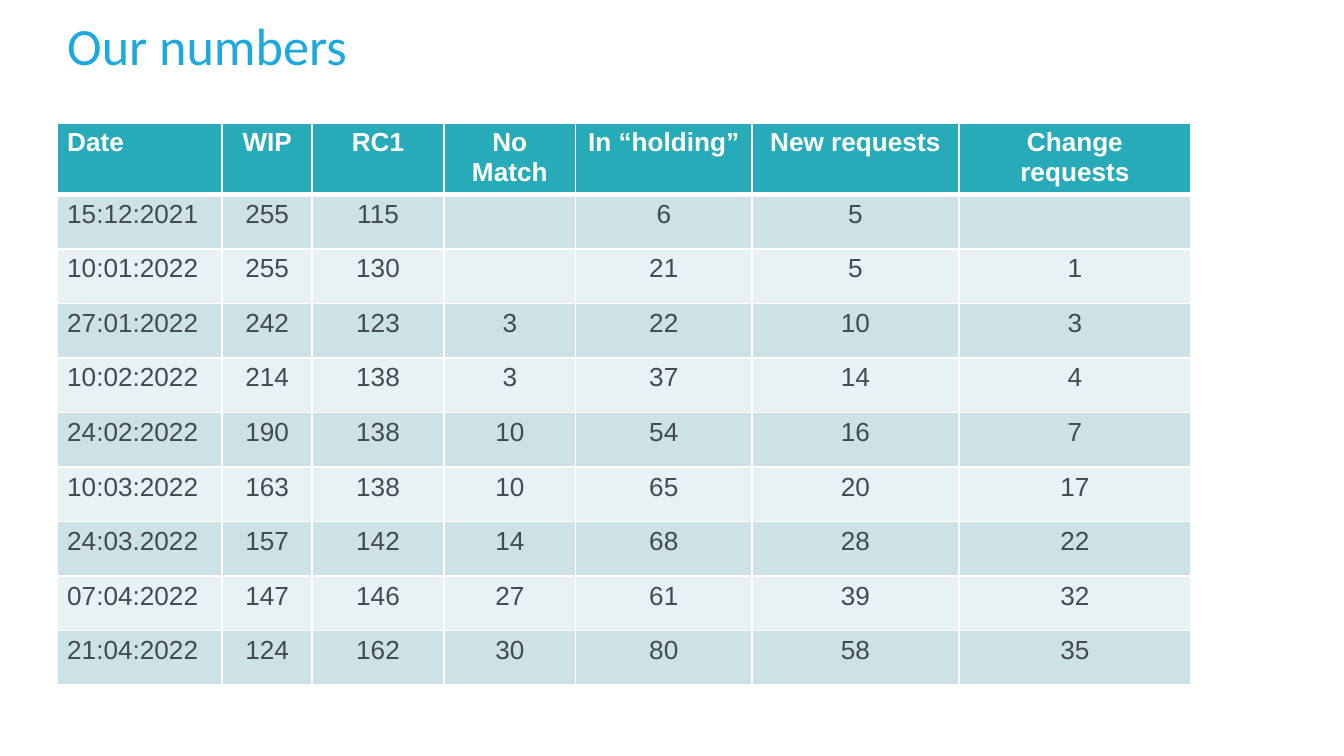
from lxml import etree
from pptx import Presentation
from pptx.dml.color import RGBColor
from pptx.enum.text import MSO_ANCHOR, PP_ALIGN
from pptx.oxml.ns import qn
from pptx.util import Cm, Pt

LEFT, CENTER = PP_ALIGN.LEFT, PP_ALIGN.CENTER
TOP, MIDDLE = MSO_ANCHOR.TOP, MSO_ANCHOR.MIDDLE

WHITE = RGBColor(0xFF, 0xFF, 0xFF)
BLUE = RGBColor(0x1D, 0xA8, 0xDE)
TEAL = RGBColor(0x27, 0xAB, 0xB8)
SLATE = RGBColor(0x42, 0x4A, 0x55)
BANDS = RGBColor(0xE8, 0xF1, 0xF3), RGBColor(0xCD, 0xE2, 0xE6)

WIDTHS = [3.12, 1.7, 2.49, 2.49, 3.33, 3.91, 4.39]
HEAD_HEIGHT, ROW_HEIGHT = 1.35, 1.03
ROWS = [
    ["Date", "WIP", "RC1", "No Match", "In “holding”", "New requests", "Change requests"],
    ["15:12:2021", 255, 115, "", 6, 5, ""],
    ["10:01:2022", 255, 130, "", 21, 5, 1],
    ["27:01:2022", 242, 123, 3, 22, 10, 3],
    ["10:02:2022", 214, 138, 3, 37, 14, 4],
    ["24:02:2022", 190, 138, 10, 54, 16, 7],
    ["10:03:2022", 163, 138, 10, 65, 20, 17],
    ["24:03.2022", 157, 142, 14, 68, 28, 22],
    ["07:04:2022", 147, 146, 27, 61, 39, 32],
    ["21:04:2022", 124, 162, 30, 80, 58, 35],
]


def write(frame, text, font="Arial", size=14, color=SLATE, bold=False,
          align=LEFT, spacing=None):
    para = frame.paragraphs[0]
    para.text = text
    para.alignment = align
    para.line_spacing = spacing
    # The paragraph font also sets the size of an empty cell.
    for face in [para.font] + [run.font for run in para.runs]:
        face.name, face.size, face.bold = font, Pt(size), bold
        face.color.rgb = color


def add_borders(cell, **points):
    """Draw white cell borders; they must come before the fill in the XML."""
    props = cell._tc.get_or_add_tcPr()
    for place, (side, width) in enumerate(points.items()):
        line = etree.Element(qn(f"a:ln{side}"), w=str(Pt(width)))
        solid = etree.SubElement(line, qn("a:solidFill"))
        etree.SubElement(solid, qn("a:srgbClr"), val=str(WHITE))
        props.insert(place, line)


deck = Presentation()
deck.slide_width, deck.slide_height = Cm(25.4), Cm(14.28)
slide = deck.slides.add_slide(deck.slide_layouts[5])

title = slide.shapes.title
title.left, title.top = Cm(1.08), Cm(0)
title.width, title.height = Cm(21.9), Cm(1.85)
frame = title.text_frame
frame.vertical_anchor = MIDDLE
frame.margin_left = frame.margin_right = Cm(0.19)
frame.margin_top = frame.margin_bottom = Cm(0.1)
write(frame, "Our numbers", font="Calibri", size=28, color=BLUE, spacing=0.9)

height = HEAD_HEIGHT + ROW_HEIGHT * (len(ROWS) - 1)
table = slide.shapes.add_table(len(ROWS), len(WIDTHS), Cm(1.08), Cm(2.32),
                               Cm(sum(WIDTHS)), Cm(height)).table
for column, width in zip(table.columns, WIDTHS):
    column.width = Cm(width)

for r, values in enumerate(ROWS):
    head = r == 0
    table.rows[r].height = Cm(HEAD_HEIGHT if head else ROW_HEIGHT)
    for c, value in enumerate(values):
        cell = table.cell(r, c)
        cell.vertical_anchor = TOP
        cell.margin_left = cell.margin_right = Cm(0.19)
        cell.margin_top = cell.margin_bottom = Cm(0.1)
        cell.fill.solid()
        cell.fill.fore_color.rgb = TEAL if head else BANDS[r % 2]
        add_borders(cell, L=1, R=1, T=3 if r == 1 else 1, B=3 if head else 1)
        write(cell.text_frame, str(value), bold=head,
              color=WHITE if head else SLATE, align=CENTER if c else LEFT)

deck.save("out.pptx")
